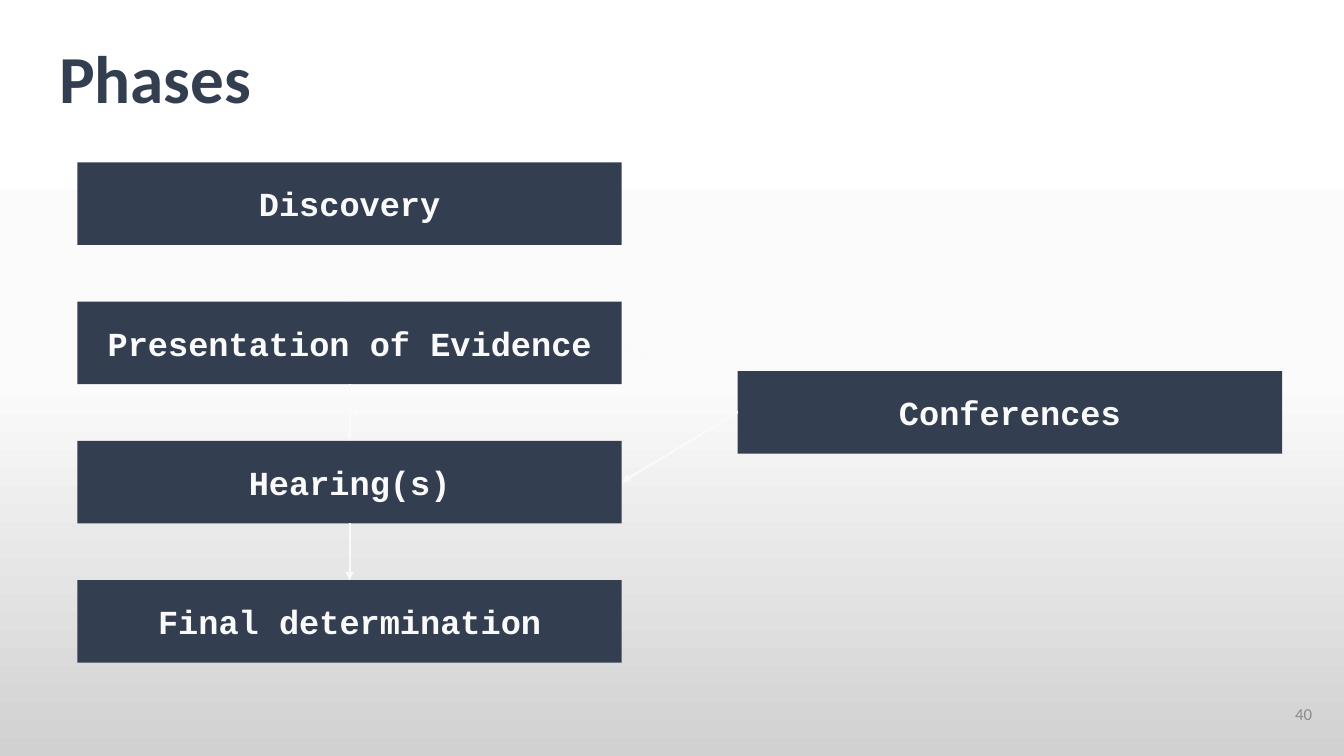
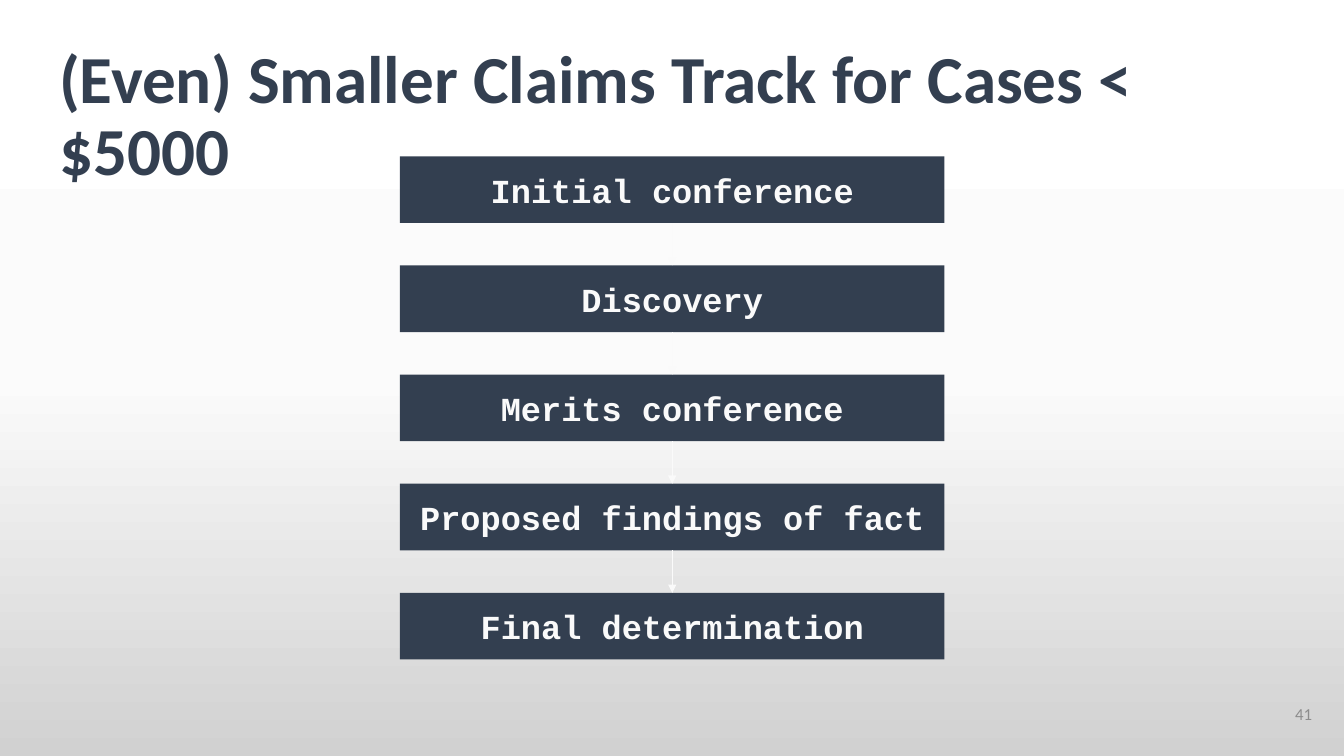
import copy

import lxml.etree
import pptx
import pptx.dml.color
import pptx.enum.shapes
import pptx.enum.text
import pptx.oxml.ns
import pptx.util

Cm = pptx.util.Cm
Pt = pptx.util.Pt
ALIGN = pptx.enum.text.PP_ALIGN
ANCHOR = pptx.enum.text.MSO_ANCHOR
RECTANGLE = pptx.enum.shapes.MSO_SHAPE.RECTANGLE
STRAIGHT = pptx.enum.shapes.MSO_CONNECTOR.STRAIGHT
TOP, LEFT, BOTTOM, RIGHT = range(4)

COLORS = {"navy": "333F50", "pale": "FAFAFA", "gray": "8C8C8C",
          "sky": "FFFFFF", "middle": "FBFBFB", "ground": "D1D1D1"}
RGB = {name: pptx.dml.color.RGBColor.from_string(code) for name, code in COLORS.items()}

STYLES = {
    "title": {"font": {"name": "Calibri", "size": Pt(48), "bold": True}, "color": "navy",
              "paragraph": {"alignment": ALIGN.LEFT, "line_spacing": 0.9}, "anchor": ANCHOR.TOP},
    "number": {"font": {"name": "Calibri", "size": Pt(12)}, "color": "gray",
               "paragraph": {"alignment": ALIGN.RIGHT}, "anchor": ANCHOR.MIDDLE},
    "step": {"font": {"name": "Courier New", "size": Pt(24), "bold": True}, "color": "pale",
             "paragraph": {"alignment": ALIGN.CENTER}, "anchor": ANCHOR.MIDDLE},
}
FRAME = {"word_wrap": True, **{f"margin_{side}": Cm(0.33) for side in ("left", "top", "right", "bottom")}}

STEP_WIDTH = 13.72
SLIDES = [
    {"title": "Phases", "number": "40", "left": 1.95, "top": 4.09, "height": 2.08, "pitch": 3.51,
     "arrow": 1.5,
     "steps": ["Discovery", "Presentation of Evidence", "Hearing(s)", "Final determination"],
     "side": {"text": "Conferences", "left": 18.59, "top": 9.35, "joins": (1, 2)}},
    {"title": "(Even) Smaller Claims Track for Cases < $5000", "number": "41",
     "left": 10.08, "top": 3.94, "height": 1.68, "pitch": 2.75, "arrow": 0.75,
     "steps": ["Initial conference", "Discovery", "Merits conference",
               "Proposed findings of fact", "Final determination"]},
]


def write(shape, text, style_name):
    style = STYLES[style_name]
    frame = shape.text_frame
    paragraph = frame.paragraphs[0]
    run = paragraph.add_run()
    run.text = text
    run.font.color.rgb = RGB[style["color"]]
    formats = [(frame, {**FRAME, "vertical_anchor": style["anchor"]}),
               (paragraph, style["paragraph"]), (run.font, style["font"])]
    for target, values in formats:
        for attribute, value in values.items():
            setattr(target, attribute, value)


def add_arrow(slide, start, start_side, width, tip=(0, 0)):
    """Draw an arrow from one side of a box to a point; the tip can be joined to a box later."""
    arrow = slide.shapes.add_connector(STRAIGHT, 0, 0, *tip)
    arrow.begin_connect(start, start_side)
    arrow.line.color.rgb = RGB["pale"]
    arrow.line.width = Pt(width)
    line = arrow.line._get_or_add_ln()
    lxml.etree.SubElement(line, pptx.oxml.ns.qn("a:tailEnd"), type="triangle")
    lxml.etree.SubElement(line.getparent(), pptx.oxml.ns.qn("a:effectLst"))
    return arrow


prs = pptx.Presentation()
prs.slide_width, prs.slide_height = Cm(33.87), Cm(19.05)

# Shared background: three stops from top to bottom
backdrop = prs.slide_master.background.fill
backdrop.gradient()
backdrop.gradient_angle = 270
stop_list = prs.slide_master.element.xpath(".//p:bgPr//a:gsLst")[0]
stop_list.append(copy.deepcopy(stop_list[-1]))
for stop, position, color in zip(backdrop.gradient_stops, (0, 0.5, 1), ("sky", "middle", "ground")):
    stop.position = position
    stop.color.rgb = RGB[color]

for content in SLIDES:
    slide = prs.slides.add_slide(prs.slide_layouts[6])
    title = slide.shapes.add_textbox(Cm(1.16), Cm(0.81), Cm(31.55), Cm(2.13))
    write(title, content["title"], "title")
    number = slide.shapes.add_textbox(Cm(31.37), Cm(17.27), Cm(2.03), Cm(1.45))
    write(number, content["number"], "number")

    places = [(text, content["left"], content["top"] + index * content["pitch"])
              for index, text in enumerate(content["steps"])]
    side = content.get("side")
    if side:
        places.append((side["text"], side["left"], side["top"]))

    boxes = []
    for text, left, top in places:
        box = slide.shapes.add_shape(RECTANGLE, Cm(left), Cm(top), Cm(STEP_WIDTH), Cm(content["height"]))
        box.shadow.inherit = False
        box.fill.solid()
        box.fill.fore_color.rgb = RGB["navy"]
        box.line.fill.background()
        write(box, text, "step")
        boxes.append(box)

    steps = boxes[:len(content["steps"])]
    for upper, lower in zip(steps, steps[1:]):
        add_arrow(slide, upper, BOTTOM, content["arrow"]).end_connect(lower, TOP)
    if side:
        conferences = boxes[-1]
        for index in side["joins"]:
            add_arrow(slide, conferences, LEFT, content["arrow"]).end_connect(steps[index], RIGHT)
        # The level arrow meets the flow line between the two joined steps
        flow_point = (steps[0].left + steps[0].width // 2, conferences.top + conferences.height // 2)
        add_arrow(slide, conferences, LEFT, content["arrow"], flow_point)

prs.save("out.pptx")
